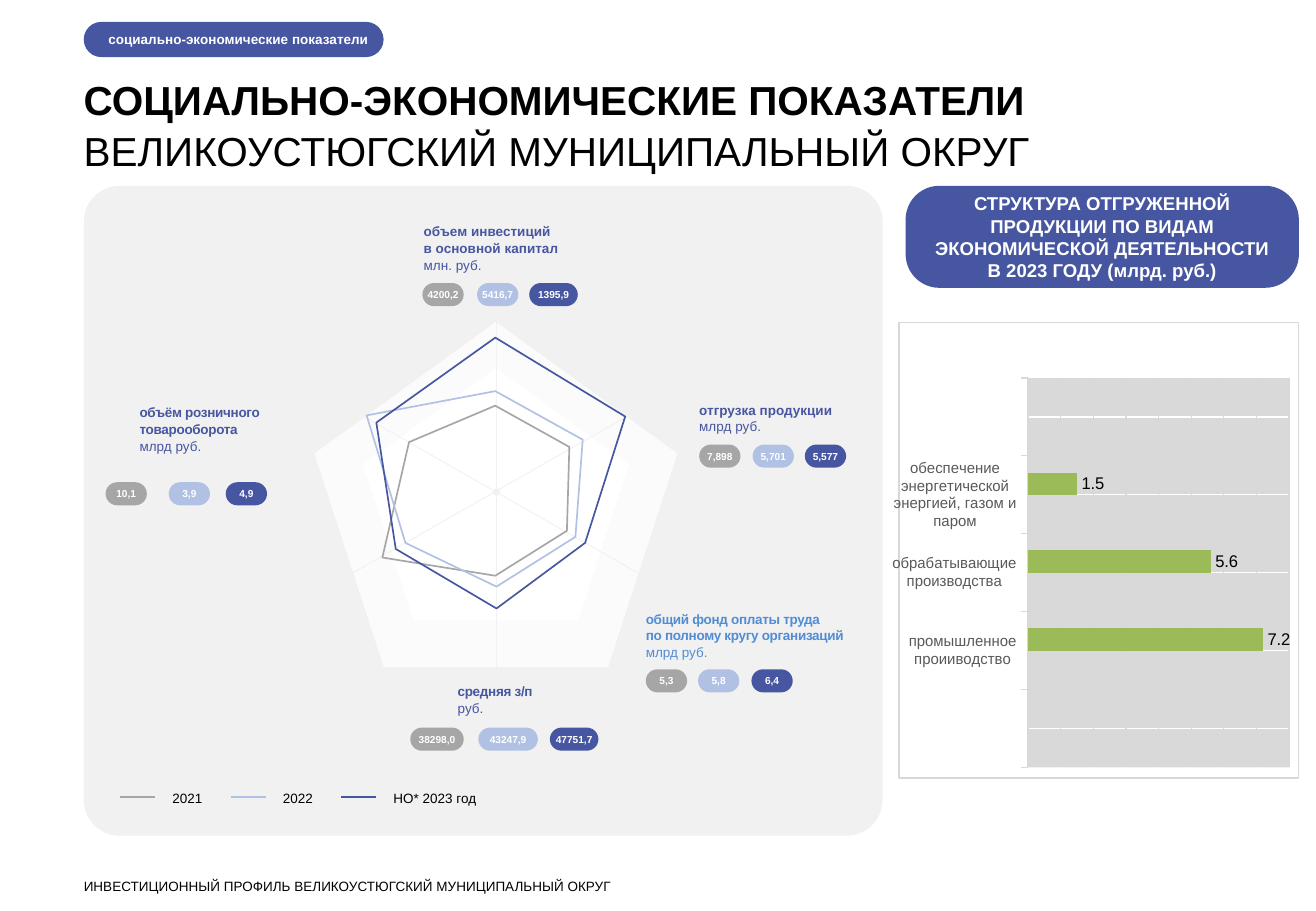
"""Build the slide of socio-economic indicators of a municipal district."""
from lxml import etree
from pptx import Presentation
from pptx.chart.data import CategoryChartData
from pptx.dml.color import RGBColor
from pptx.enum.chart import XL_CHART_TYPE, XL_LABEL_POSITION, XL_TICK_LABEL_POSITION, XL_TICK_MARK
from pptx.enum.shapes import MSO_CONNECTOR, MSO_SHAPE
from pptx.enum.text import MSO_ANCHOR, PP_ALIGN
from pptx.oxml.ns import qn
from pptx.util import Inches, Pt

COLORS = {
    "navy": "4756A0", "pale": "B1C1E4", "gray": "A6A6A6", "sky": "518CD4",
    "panel": "F1F1F1", "outer": "FBFBFB", "white": "FFFFFF", "black": "000000",
    "border": "D8D8D8", "plot": "D9D9D9", "green": "9BBB59", "red": "C0504D",
    "axis": "595959",
}
RGB = {name: RGBColor.from_string(value) for name, value in COLORS.items()}
YEAR_COLORS = ["gray", "pale", "navy"]

deck = Presentation()
deck.slide_width, deck.slide_height = Inches(10.84), Inches(7.5)
page = deck.slides.add_slide(deck.slide_layouts[6])


def add_text(area, lines, size, color, bold_lines=0, tight=False):
    """Write lines of text in a box; a None area position is not allowed."""
    box = page.shapes.add_textbox(*[Inches(value) for value in area])
    frame = box.text_frame
    frame.margin_left = frame.margin_right = frame.margin_top = frame.margin_bottom = 0
    frame.text = "\n".join(lines)
    for number, para in enumerate(frame.paragraphs):
        para.line_spacing = 1.05
        for span in para.runs:
            span.font.name, span.font.size = "Arial", Pt(size)
            span.font.color.rgb = RGB[color]
            span.font.bold = number < bold_lines
            if tight and number < bold_lines:
                span.font._element.set("spc", "-20")


def add_block(kind, area, color, text="", size=6, corner=None, align=PP_ALIGN.CENTER, left=0):
    """Draw a filled shape, with bold white text if there is any."""
    block = page.shapes.add_shape(kind, *[Inches(value) for value in area])
    block.shadow.inherit = False
    block.fill.solid()
    block.fill.fore_color.rgb = RGB[color]
    block.line.fill.background()
    if corner is not None:
        block.adjustments[0] = corner
    if text:
        frame = block.text_frame
        frame.margin_right = frame.margin_top = frame.margin_bottom = 0
        frame.margin_left = Inches(left)
        frame.vertical_anchor = MSO_ANCHOR.MIDDLE
        frame.word_wrap = False
        frame.text = text
        para = frame.paragraphs[0]
        para.alignment = align
        for span in para.runs:
            span.font.name, span.font.size, span.font.bold = "Arial", Pt(size), True
            span.font.color.rgb = RGB["white"]


rounded = MSO_SHAPE.ROUNDED_RECTANGLE
add_block(rounded, (0.69, 0.18, 2.47, 0.29), "navy", "социально-экономические показатели",
          size=8, corner=0.5, align=PP_ALIGN.LEFT, left=0.16)
add_text((0.69, 0.6, 9.67, 0.79),
         ["СОЦИАЛЬНО-ЭКОНОМИЧЕСКИЕ ПОКАЗАТЕЛИ", "ВЕЛИКОУСТЮГСКИЙ МУНИЦИПАЛЬНЫЙ ОКРУГ"],
         24, "black", bold_lines=1)
add_block(rounded, (0.69, 1.53, 6.58, 5.35), "panel", corner=0.055)
add_block(rounded, (7.46, 1.53, 3.24, 0.84), "navy",
          "СТРУКТУРА ОТГРУЖЕННОЙ\vПРОДУКЦИИ ПО ВИДАМ\v"
          "ЭКОНОМИЧЕСКОЙ ДЕЯТЕЛЬНОСТИ\vВ 2023 ГОДУ (млрд. руб.)", size=11, corner=0.331)
add_block(MSO_SHAPE.REGULAR_PENTAGON, (2.59, 2.65, 2.99, 2.84), "outer")
add_block(MSO_SHAPE.REGULAR_PENTAGON, (2.99, 3.03, 2.19, 2.08), "white")

lines = [
    ((4.09, 2.65, 4.09, 5.49), "panel", 0.5),
    ((5.18, 3.42, 2.9, 4.72), "panel", 0.5),
    ((2.98, 3.42, 5.26, 4.72), "panel", 0.5),
]
legend = [("2021", 0.99), ("2022", 1.9), ("НО* 2023 год", 2.81)]
for (year, left), color in zip(legend, YEAR_COLORS):
    lines.append(((left, 6.56, left + 0.29, 6.56), color, 1))
    add_text((left + 0.43, 6.5, 0.85, 0.12), [year], 8, "black")
for ends, color, width in lines:
    line = page.shapes.add_connector(MSO_CONNECTOR.STRAIGHT, *[Inches(value) for value in ends])
    line.line.color.rgb, line.line.width = RGB[color], Pt(width)
    etree.SubElement(line._element.spPr, qn("a:effectLst"))
add_block(MSO_SHAPE.OVAL, (4.06, 4.02, 0.06, 0.06), "panel")

year_outlines = [
    [(3.37, 3.64), (4.08, 3.34), (4.69, 3.68), (4.67, 4.37), (4.08, 4.74), (3.15, 4.59)],
    [(3.02, 3.42), (4.08, 3.22), (4.8, 3.62), (4.74, 4.42), (4.09, 4.83), (3.34, 4.47)],
    [(3.1, 3.48), (4.08, 2.78), (5.15, 3.43), (4.82, 4.47), (4.09, 5.01), (3.26, 4.52)],
]
for points, color in zip(year_outlines, YEAR_COLORS):
    corners = [(Inches(x), Inches(y)) for x, y in points]
    builder = page.shapes.build_freeform(*corners[0])
    builder.add_line_segments(corners[1:], close=True)
    outline = builder.convert_to_shape()
    outline.shadow.inherit = False
    outline.fill.background()
    outline.line.color.rgb, outline.line.width = RGB[color], Pt(1)

indicators = [
    ((3.49, 1.83), ["объем инвестиций", "в основной капитал", "млн. руб."], "navy", False, 2.33,
     [("4200,2", 3.48, 0.34), ("5416,7", 3.93, 0.34), ("1395,9", 4.36, 0.4)]),
    ((5.76, 3.3), ["отгрузка продукции", "млрд руб."], "navy", False, 3.66,
     [("7,898", 5.76, 0.34), ("5,701", 6.2, 0.34), ("5,577", 6.63, 0.34)]),
    ((5.32, 5.02), ["общий фонд оплаты труда", "по полному кругу организаций", "млрд руб."],
     "sky", True, 5.51, [("5,3", 5.32, 0.34), ("5,8", 5.75, 0.34), ("6,4", 6.19, 0.34)]),
    ((1.15, 3.32), ["объём розничного", "товарооборота", "млрд руб."], "navy", True, 3.97,
     [("10,1", 0.87, 0.34), ("3,9", 1.39, 0.34), ("4,9", 1.86, 0.34)]),
    ((3.77, 5.62), ["средняя з/п", "руб."], "navy", True, 5.99,
     [("38298,0", 3.38, 0.44), ("43247,9", 3.94, 0.49), ("47751,7", 4.53, 0.4)]),
]
for (left, top), label, color, tight, pill_top, pills in indicators:
    add_text((left, top, 1.7, 0.13 * len(label)), label, 8, color, len(label) - 1, tight)
    for (value, pill_left, width), fill in zip(pills, YEAR_COLORS):
        add_block(rounded, (pill_left, pill_top, width, 0.19), fill, value, corner=0.5)

add_text((0.69, 7.22, 8.02, 0.12),
         ["ИНВЕСТИЦИОННЫЙ ПРОФИЛЬ ВЕЛИКОУСТЮГСКИЙ МУНИЦИПАЛЬНЫЙ ОКРУГ"], 8, "black")

data = CategoryChartData()
data.categories = ["", "промышленное проииводство", "обрабатывающие производства",
                   "обеспечение энергетической энергией, газом и паром", ""]
data.add_series("Series 1", [None] * 5)
data.add_series("Series 2", [None, 7.2, 5.6, 1.5, None])
chart = page.shapes.add_chart(XL_CHART_TYPE.BAR_CLUSTERED, Inches(7.35), Inches(2.65),
                              Inches(3.35), Inches(3.76), data).chart
chart.has_legend = chart.has_title = False
chart.font.name, chart.font.size = "Arial", Pt(10)
chart.font.color.rgb = RGB["black"]

bars = chart.plots[0]
bars.gap_width, bars.overlap, bars.vary_by_categories = 150, 0, False
for series, color in zip(bars.series, ["red", "green"]):
    series.format.fill.solid()
    series.format.fill.fore_color.rgb = RGB[color]
    labels = series.data_labels
    labels.show_value = True
    labels.position = XL_LABEL_POSITION.OUTSIDE_END
    labels.number_format, labels.number_format_is_linked = "General", False
    labels.font.name, labels.font.size = "Arial", Pt(10)
    labels.font.color.rgb = RGB["black"]

category_axis = chart.category_axis
category_axis.tick_label_position = XL_TICK_LABEL_POSITION.LOW
category_axis.major_tick_mark = XL_TICK_MARK.OUTSIDE
category_axis.tick_labels.font.name = "Arial"
category_axis.tick_labels.font.size = Pt(9)
category_axis.tick_labels.font.color.rgb = RGB["axis"]
category_axis.has_minor_gridlines = True
value_axis = chart.value_axis
value_axis.visible = False
value_axis.minimum_scale, value_axis.maximum_scale, value_axis.major_unit = 0, 8, 1
grid = value_axis.major_gridlines.format.line
for stroke in (category_axis.format.line, grid):
    stroke.color.rgb, stroke.width = RGB["border"], Pt(0.75)
minor_grid = category_axis.minor_gridlines if hasattr(category_axis, "minor_gridlines") else None

DRAWING = 'xmlns:a="http://schemas.openxmlformats.org/drawingml/2006/main"'
CHART = 'xmlns:c="http://schemas.openxmlformats.org/drawingml/2006/chart"'
FILL = '<a:solidFill><a:srgbClr val="{}"/></a:solidFill>'
STYLE = f'<c:spPr {CHART} {DRAWING}>{{}}<a:ln w="9525">{{}}</a:ln></c:spPr>'
white, plot, border = (FILL.format(COLORS[name]) for name in ("white", "plot", "border"))
space = chart._chartSpace
plot_area = space.find(".//" + qn("c:plotArea"))
plot_area.append(etree.fromstring(STYLE.format(plot, "<a:noFill/>")))
space.find(qn("c:chart")).addnext(etree.fromstring(STYLE.format(white, border)))
space.find(".//" + qn("c:minorGridlines")).append(etree.fromstring(STYLE.format("", white)))
for layout in plot_area.findall(qn("c:layout")):
    plot_area.remove(layout)
sizes = "".join(f'<c:{tag} val="{value}"/>' for tag, value in [
    ("layoutTarget", "inner"), ("xMode", "edge"), ("yMode", "edge"),
    ("x", 0.323), ("y", 0.122), ("w", 0.654), ("h", 0.855)])
plot_area.insert(0, etree.fromstring(
    f"<c:layout {CHART}><c:manualLayout>{sizes}</c:manualLayout></c:layout>"))

deck.save("out.pptx")
